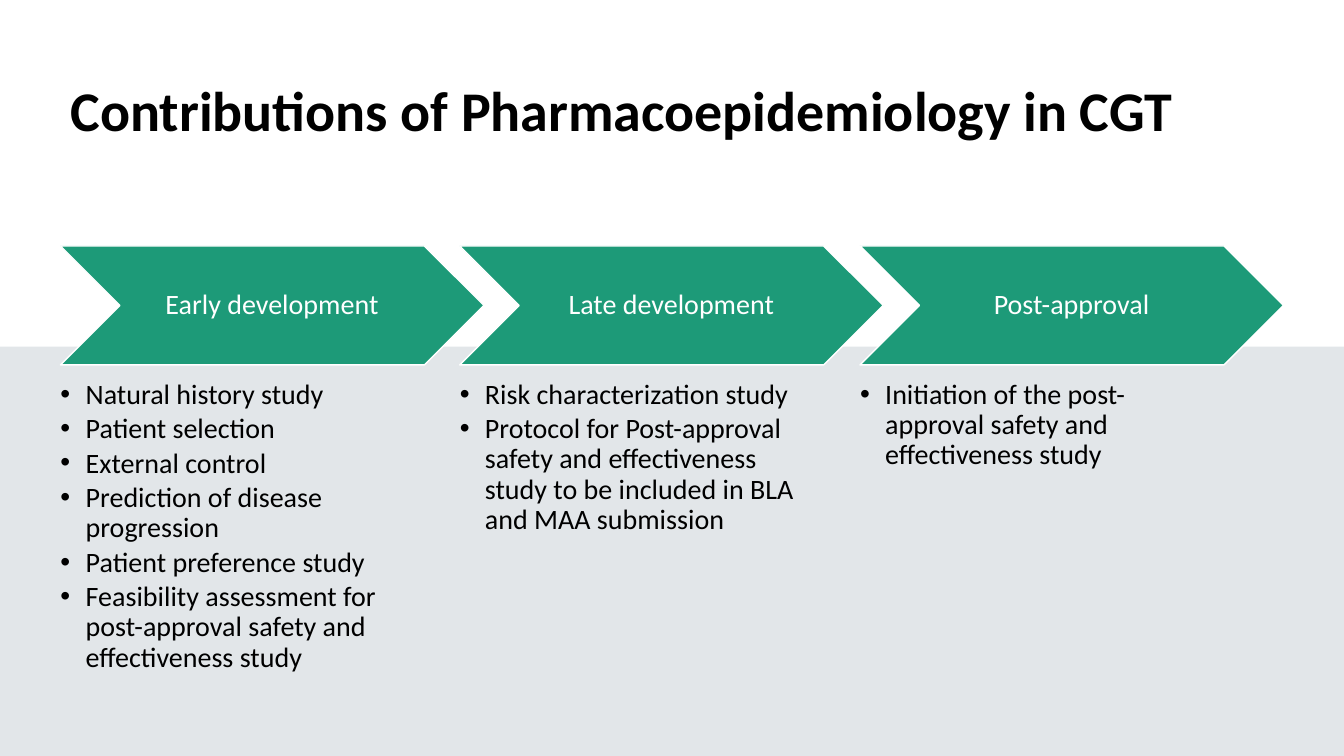
from lxml import etree
from pptx import Presentation
from pptx.dml.color import RGBColor
from pptx.enum.shapes import MSO_SHAPE
from pptx.enum.text import MSO_ANCHOR, MSO_AUTO_SIZE, PP_ALIGN
from pptx.oxml.ns import qn
from pptx.util import Pt

RECTANGLE, CHEVRON = MSO_SHAPE.RECTANGLE, MSO_SHAPE.CHEVRON
TOP, MIDDLE = MSO_ANCHOR.TOP, MSO_ANCHOR.MIDDLE
LEFT, CENTER = PP_ALIGN.LEFT, PP_ALIGN.CENTER
NO_FIT = MSO_AUTO_SIZE.NONE

PX = 9144  # 100 px to the inch
WIDTH, HEIGHT = 1333, 750
FONT = "Calibri"
COLOURS = {
    "white": "FFFFFF",
    "black": "000000",
    "grey": "F2F2F2",
    "blue": "16537F",
    "green": "1D9A78",
}

TITLE = "Contributions of Pharmacoepidemiology in CGT"
PHASES = [
    ("Early development ", [
        "Natural history study",
        "Patient selection",
        "External control",
        "Prediction of disease progression",
        "Patient preference study",
        "Feasibility assessment for post-approval safety and effectiveness study",
    ]),
    ("Late development ", [
        "Risk characterization study",
        "Protocol for Post-approval safety and effectiveness study "
        "to be included in BLA and MAA submission",
    ]),
    ("Post-approval ", [
        "Initiation of the post-approval safety and effectiveness study",
    ]),
]
MARGIN, PHASE_STEP = 60, 396.5


class Slide:
    """Holds the page and its style, with a method for each kind of element."""

    def __init__(self, page):
        self.page = page
        self.holders = list(page.placeholders)

    def colour(self, name):
        return RGBColor.from_string(COLOURS[name])

    def emu(self, *lengths):
        return [round(length * PX) for length in lengths]

    def shape(self, kind, area, fill, opacity=100):
        shape = self.page.shapes.add_shape(kind, *self.emu(*area))
        shape.shadow.inherit = False
        shape.fill.solid()
        shape.fill.fore_color.rgb = self.colour(fill)
        shape.line.fill.background()
        if opacity < 100:
            colour = shape.element.spPr.find(qn("a:solidFill"))[0]
            etree.SubElement(colour, qn("a:alpha"), val=str(opacity * 1000))
        return shape

    def frame(self, shape, anchor, insets):
        frame = shape.text_frame
        frame.word_wrap = True
        frame.auto_size = NO_FIT
        frame.vertical_anchor = anchor
        (frame.margin_left, frame.margin_top,
         frame.margin_right, frame.margin_bottom) = self.emu(*insets)
        return frame

    def add_text(self, para, text, size, colour, align=LEFT, bold=False):
        para.alignment = align
        para.line_spacing = 0.9
        para.space_before = Pt(0)
        span = para.add_run()
        span.text = text
        span.font.name = FONT
        span.font.size = Pt(size)
        span.font.bold = bold
        span.font.color.rgb = self.colour(colour)

    def holder(self, area):
        """Take the next placeholder, move it and bring it to the front."""
        holder = self.holders.pop(0)
        holder.left, holder.top, holder.width, holder.height = self.emu(*area)
        self.page.shapes.element.append(holder.element)
        return holder

    def title(self, text, area):
        frame = self.frame(self.holder(area), MIDDLE, (10, 5, 10, 5))
        self.add_text(frame.paragraphs[0], text, 40, "black", bold=True)

    def arrow(self, text, area):
        arrow = self.shape(CHEVRON, area, "green")
        arrow.line.color.rgb = self.colour("white")
        arrow.line.width = Pt(1)
        frame = self.frame(arrow, MIDDLE, (9, 3, 3, 3))
        self.add_text(frame.paragraphs[0], text, 20, "white", CENTER)

    def bullets(self, items, area):
        frame = self.frame(self.holder(area), TOP, (0, 0, 0, 0))
        for number, item in enumerate(items):
            para = frame.add_paragraph() if number else frame.paragraphs[0]
            self.add_text(para, item, 20, "black")
            para.space_after = Pt(3)
            indent = 25 * PX
            properties = para._p.get_or_add_pPr()
            properties.set("marL", str(indent))
            properties.set("indent", str(-indent))
            etree.SubElement(properties, qn("a:buFont"), typeface="Arial")
            etree.SubElement(properties, qn("a:buChar"), char="•")

    def remove_unused(self):
        for holder in self.holders:
            self.page.shapes.element.remove(holder.element)


def main():
    deck = Presentation()
    deck.slide_width, deck.slide_height = WIDTH * PX, HEIGHT * PX
    comparison = deck.slide_layouts[4]
    slide = Slide(deck.slides.add_slide(comparison))

    # Tinted background with a white upper band
    slide.shape(RECTANGLE, (0, 0, WIDTH, HEIGHT), "grey")
    slide.shape(RECTANGLE, (0, 0, WIDTH, HEIGHT), "blue", opacity=7)
    slide.shape(RECTANGLE, (0, 0, WIDTH, 344), "white")

    # Title
    slide.title(TITLE, (MARGIN, 40, 1213, 145))

    # Phases: an arrow with its list below
    for number, (name, items) in enumerate(PHASES):
        left = round(MARGIN + number * PHASE_STEP)
        slide.arrow(name, (left, 244, 420, 118))
        slide.bullets(items, (left, 377, 336, 300))

    slide.remove_unused()
    deck.save("out.pptx")


if __name__ == "__main__":
    main()
